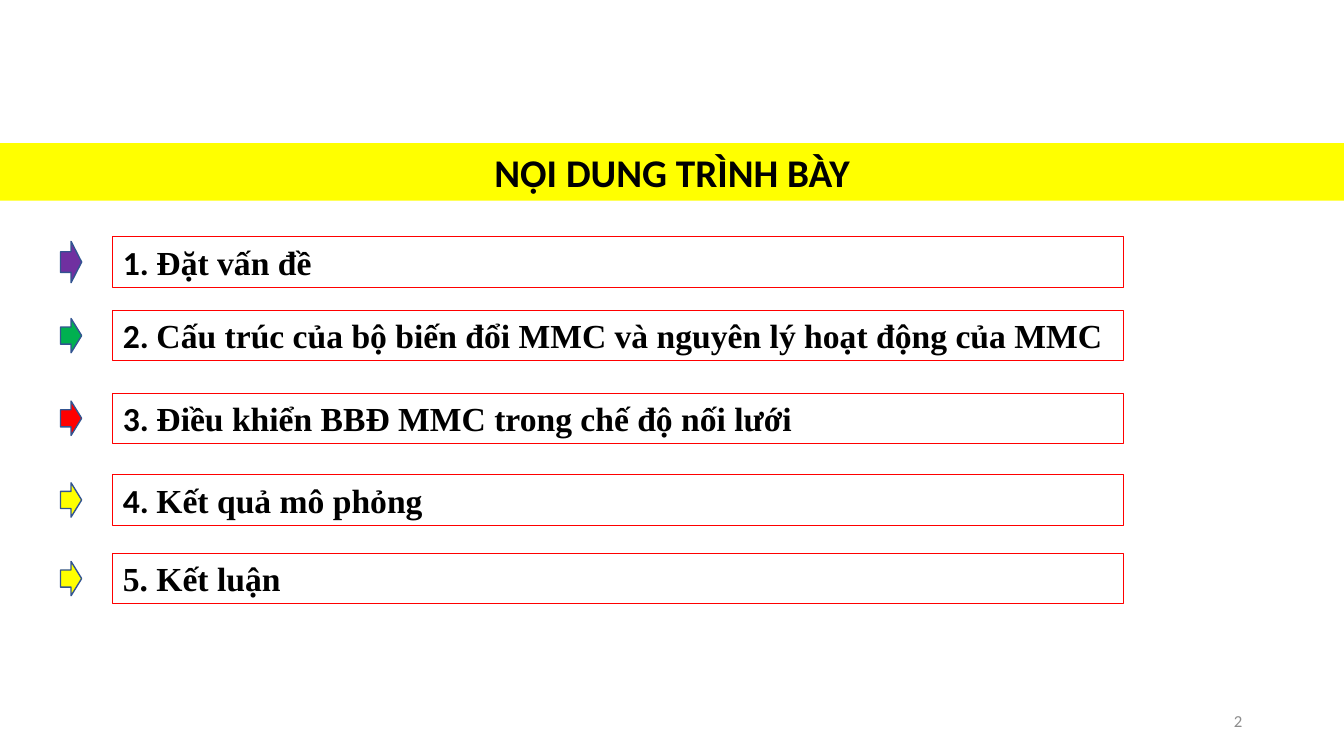
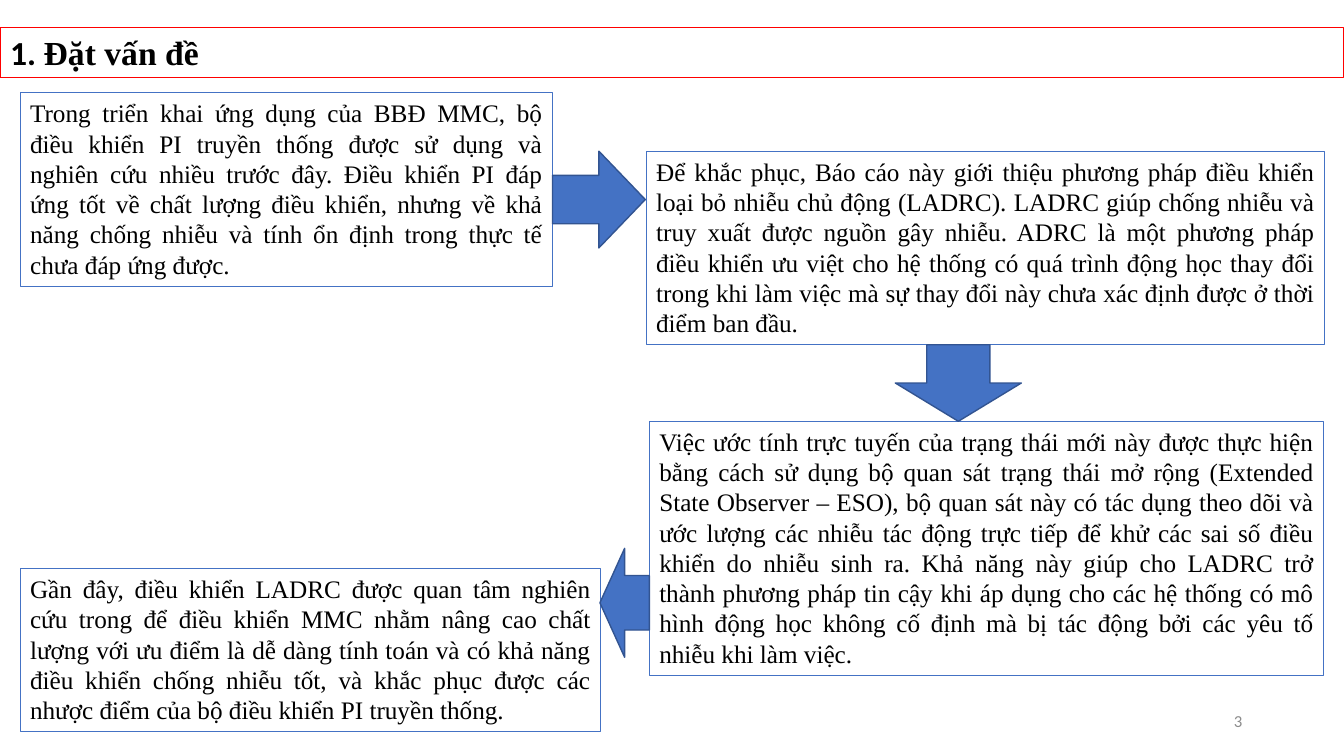
from pptx import Presentation
from pptx.dml.color import RGBColor
from pptx.enum.shapes import MSO_SHAPE as Shape
from pptx.enum.text import MSO_ANCHOR as Anchor, MSO_AUTO_SIZE as Fit, PP_ALIGN as Align
from pptx.util import Inches, Pt

BLACK = RGBColor(0x00, 0x00, 0x00)
GREY = RGBColor(0x8C, 0x8C, 0x8C)
RED = RGBColor(0xFF, 0x00, 0x00)
YELLOW = RGBColor(0xFF, 0xFF, 0x00)
GREEN = RGBColor(0x00, 0xB0, 0x50)
PURPLE = RGBColor(0x70, 0x30, 0xA0)
BLUE = RGBColor(0x44, 0x72, 0xC4)
NAVY = RGBColor(0x32, 0x54, 0x91)
SANS = "Calibri"
SERIF = "Times New Roman"
WIDTH = 13.33
ROW = 0.5

TOPICS = [
    (2.35, 0.41, PURPLE, [("1. ", SANS), ("Đặt vấn đề", SERIF)]),
    (3.08, 0.34, GREEN, [("2. ", SANS), (
        "Cấu trúc của bộ biến đổi MMC và nguyên lý hoạt động của MMC", SERIF)]),
    (3.9, 0.34, RED, [("3. ", SANS), ("Điều khiển BBĐ MMC trong chế độ nối lưới", SERIF)]),
    (4.71, 0.34, YELLOW, [("4. ", SANS), ("Kết quả mô phỏng", SERIF)]),
    (5.49, 0.34, YELLOW, [("5. Kết luận", SERIF)]),
]

STEPS = [
    ((0.2, 0.92, 5.28, 1.92),
     "Trong triển khai ứng dụng của BBĐ MMC, bộ điều khiển PI truyền thống được sử dụng "
     "và nghiên cứu nhiều trước đây. Điều khiển PI đáp ứng tốt về chất lượng điều khiển, "
     "nhưng về khả năng chống nhiễu và tính ổn định trong thực tế chưa đáp ứng được."),
    ((6.41, 1.5, 6.73, 1.92),
     "Để khắc phục, Báo cáo này giới thiệu phương pháp điều khiển loại bỏ nhiễu chủ động "
     "(LADRC). LADRC giúp chống nhiễu và truy xuất được nguồn gây nhiễu. ADRC là một "
     "phương pháp điều khiển ưu việt cho hệ thống có quá trình động học thay đổi trong khi "
     "làm việc mà sự thay đổi này chưa xác định được ở thời điểm ban đầu."),
    ((6.44, 4.18, 6.69, 2.52),
     "Việc ước tính trực tuyến của trạng thái mới này được thực hiện bằng cách sử dụng bộ "
     "quan sát trạng thái mở rộng (Extended State Observer – ESO), bộ quan sát này có tác "
     "dụng theo dõi và ước lượng các nhiễu tác động trực tiếp để khử các sai số điều khiển "
     "do nhiễu sinh ra. Khả năng này giúp cho LADRC trở thành phương pháp tin cậy khi áp "
     "dụng cho các hệ thống có mô hình động học không cố định mà bị tác động bởi các yêu tố "
     "nhiễu khi làm việc."),
    ((0.2, 5.64, 5.76, 1.62),
     "Gần đây, điều khiển LADRC được quan tâm nghiên cứu trong để điều khiển MMC nhằm nâng "
     "cao chất lượng với ưu điểm là dễ dàng tính toán và có khả năng điều khiển chống nhiễu "
     "tốt, và khắc phục được các nhược điểm của bộ điều khiển PI truyền thống."),
]

LINKS = [
    (Shape.RIGHT_ARROW, (5.48, 1.5, 0.92, 0.96)),
    (Shape.DOWN_ARROW, (8.88, 3.42, 1.25, 0.76)),
    (Shape.LEFT_ARROW, (5.95, 5.44, 0.49, 1.08)),
]


def place(shape, area):
    shape.left, shape.top, shape.width, shape.height = map(Inches, area)


def write(shape, runs, size, align=Align.LEFT, bold=False, color=BLACK, anchor=Anchor.TOP):
    frame = shape.text_frame
    frame.word_wrap = True
    frame.auto_size = Fit.NONE
    frame.vertical_anchor = anchor
    para = frame.paragraphs[0]
    para.alignment = align
    para.font.size = Pt(size)
    para.font.bold = bold
    para.font.color.rgb = color
    para.font.name = runs[-1][1]
    for text, font in runs:
        run = para.add_run()
        run.text = text
        if font != para.font.name:
            run.font.name = font


def outline(shape, color, width=0.75):
    shape.line.color.rgb = color
    shape.line.width = Pt(width)


def add_box(slide, area, runs, size, color, align=Align.JUSTIFY, bold=False):
    box = slide.shapes.add_textbox(*map(Inches, area))
    outline(box, color)
    write(box, runs, size, align, bold)


def add_arrow(slide, kind, area, color):
    arrow = slide.shapes.add_shape(kind, *map(Inches, area))
    arrow.shadow.inherit = False
    arrow.fill.solid()
    arrow.fill.fore_color.rgb = color
    outline(arrow, NAVY, 1)


def add_slide(deck, number, area, runs, size, align=Align.LEFT):
    slide = deck.slides.add_slide(deck.slide_layouts[5])
    title = slide.shapes.title
    place(title, area)
    write(title, runs, size, align, bold=True)
    page = slide.shapes.add_textbox(*map(Inches, (9.42, 6.95, 3, 0.4)))
    write(page, [(str(number), SANS)], 12, Align.RIGHT, color=GREY, anchor=Anchor.MIDDLE)
    return slide


def add_agenda(deck):
    slide = add_slide(deck, 2, (0, 1.42, WIDTH, 0.57),
                      [("NỘI DUNG TRÌNH BÀY", SANS)], 28, Align.CENTER)
    band = slide.shapes.title.fill
    band.solid()
    band.fore_color.rgb = YELLOW
    for top, high, color, runs in TOPICS:
        add_box(slide, (1.12, top, 10.02, ROW), runs, 24, RED, Align.LEFT, bold=True)
        area = (0.6, top + (ROW - high) / 2, 0.21, high)
        add_arrow(slide, Shape.RIGHT_ARROW, area, color)


def add_problem(deck):
    slide = add_slide(deck, 3, (0, 0.27, WIDTH, ROW), TOPICS[0][-1], 24)
    outline(slide.shapes.title, RED)
    for area, text in STEPS:
        add_box(slide, area, [(text, SERIF)], 18, BLUE)
    for kind, area in LINKS:
        add_arrow(slide, kind, area, BLUE)


def main():
    deck = Presentation()
    deck.slide_width = Inches(WIDTH)
    deck.slide_height = Inches(7.5)
    add_agenda(deck)
    add_problem(deck)
    deck.save("out.pptx")


if __name__ == "__main__":
    main()
